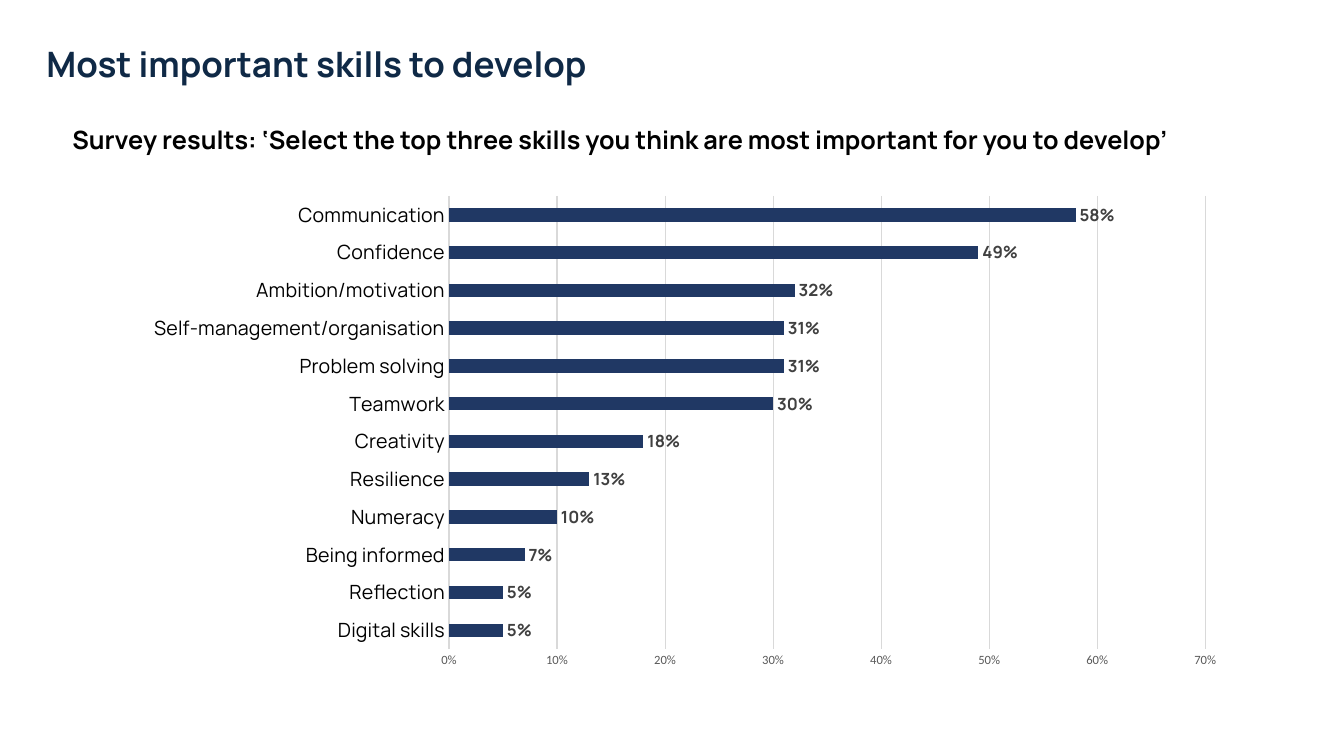
from lxml import etree
from pptx import Presentation
from pptx.chart.data import CategoryChartData
from pptx.dml.color import RGBColor
from pptx.enum.chart import XL_CHART_TYPE, XL_LABEL_POSITION, XL_TICK_MARK
from pptx.enum.text import MSO_ANCHOR, PP_ALIGN
from pptx.oxml.ns import qn
from pptx.util import Pt

BAR_CLUSTERED = XL_CHART_TYPE.BAR_CLUSTERED
OUTSIDE_END = XL_LABEL_POSITION.OUTSIDE_END
NO_TICK = XL_TICK_MARK.NONE
MIDDLE = MSO_ANCHOR.MIDDLE
LEFT, CENTER = PP_ALIGN.LEFT, PP_ALIGN.CENTER

NAVY = RGBColor(0x0F, 0x29, 0x46)
BAR_BLUE = RGBColor(0x20, 0x38, 0x64)
BLACK = RGBColor(0, 0, 0)
LABEL_GREY = RGBColor(0x40, 0x40, 0x40)
SCALE_GREY = RGBColor(0x59, 0x59, 0x59)
GRID_GREY = RGBColor(0xD9, 0xD9, 0xD9)

HEADING_FONT = "Manrope"
SCALE_FONT = "Calibri"

SKILLS = [
    ("Communication", 0.58),
    ("Confidence", 0.49),
    ("Ambition/motivation", 0.32),
    ("Self-management/organisation", 0.31),
    ("Problem solving", 0.31),
    ("Teamwork", 0.30),
    ("Creativity", 0.18),
    ("Resilience", 0.13),
    ("Numeracy", 0.10),
    ("Being informed", 0.07),
    ("Reflection", 0.05),
    ("Digital skills", 0.05),
]


def style_font(font, name, size, color, bold=False):
    font.name = name
    font.size = Pt(size)
    font.color.rgb = color
    font.bold = bold


def style_line(line):
    line.color.rgb = GRID_GREY
    line.width = Pt(0.75)


def write_heading(heading, box, text, size, color, align, wrap):
    """Place a title or text box and fill it with one bold line."""
    heading.left, heading.top, heading.width, heading.height = map(Pt, box)
    frame = heading.text_frame
    frame.word_wrap = wrap
    frame.vertical_anchor = MIDDLE
    paragraph = frame.paragraphs[0]
    paragraph.alignment = align
    paragraph.line_spacing = 1.0
    run = paragraph.add_run()
    run.text = text
    style_font(run.font, HEADING_FONT, size, color, bold=True)


def fix_plot_area(chart, x, y, w, h):
    """Set the inner plot area as fractions of the chart box."""
    plot_area = chart.plots[0]._element.getparent()
    for old_layout in plot_area.findall(qn("c:layout")):
        plot_area.remove(old_layout)
    layout = etree.Element(qn("c:layout"))
    manual = etree.SubElement(layout, qn("c:manualLayout"))
    settings = [("layoutTarget", "inner"), ("xMode", "edge"), ("yMode", "edge"),
                ("x", x), ("y", y), ("w", w), ("h", h)]
    for tag, value in settings:
        etree.SubElement(manual, qn(f"c:{tag}")).set("val", str(value))
    plot_area.insert(0, layout)


def add_skills_chart(slide, box):
    survey = CategoryChartData(number_format="0%")
    # Bar charts stack categories from the bottom up.
    ranking = SKILLS[::-1]
    survey.categories = [skill for skill, _ in ranking]
    survey.add_series("Series 1", [share for _, share in ranking])
    chart = slide.shapes.add_chart(BAR_CLUSTERED, *map(Pt, box), survey).chart
    chart.has_legend = False
    chart.has_title = False
    style_font(chart.font, SCALE_FONT, 10, BLACK)
    fix_plot_area(chart, 0.286, 0.017, 0.689, 0.905)

    skill_axis = chart.category_axis
    skill_axis.major_tick_mark = skill_axis.minor_tick_mark = NO_TICK
    style_font(skill_axis.tick_labels.font, HEADING_FONT, 14, BLACK)
    style_line(skill_axis.format.line)

    share_axis = chart.value_axis
    share_axis.minimum_scale, share_axis.maximum_scale = 0, 0.7
    share_axis.major_unit = 0.1
    share_axis.major_tick_mark = share_axis.minor_tick_mark = NO_TICK
    share_axis.tick_labels.number_format = "0%"
    share_axis.tick_labels.number_format_is_linked = False
    style_font(share_axis.tick_labels.font, SCALE_FONT, 9, SCALE_GREY)
    share_axis.format.line.fill.background()
    share_axis.has_major_gridlines = True
    style_line(share_axis.major_gridlines.format.line)

    bars = chart.plots[0]
    bars.gap_width = 182
    bars.vary_by_categories = False
    fill = bars.series[0].format.fill
    fill.solid()
    fill.fore_color.rgb = BAR_BLUE

    labels = bars.series[0].data_labels
    labels.show_value = True
    labels.position = OUTSIDE_END
    labels.number_format = "0%"
    labels.number_format_is_linked = False
    style_font(labels.font, HEADING_FONT, 12, LABEL_GREY, bold=True)


def build_survey_slide(prs):
    slide = prs.slides.add_slide(prs.slide_layouts[5])
    write_heading(slide.shapes.title, (26, 26.6, 404.6, 37.4),
                  "Most important skills to develop", 25, NAVY, LEFT, wrap=False)
    add_skills_chart(slide, (96.5, 133.9, 784.1, 357.8))
    question_box = (26, 85, 833.8, 28.8)
    question = slide.shapes.add_textbox(*map(Pt, question_box))
    write_heading(question, question_box,
                  "Survey results: ‘Select the top three skills you think "
                  "are most important for you to develop’",
                  18, BLACK, CENTER, wrap=True)


def main():
    prs = Presentation()
    prs.slide_width, prs.slide_height = Pt(960), Pt(540)
    build_survey_slide(prs)
    prs.save("out.pptx")


if __name__ == "__main__":
    main()
